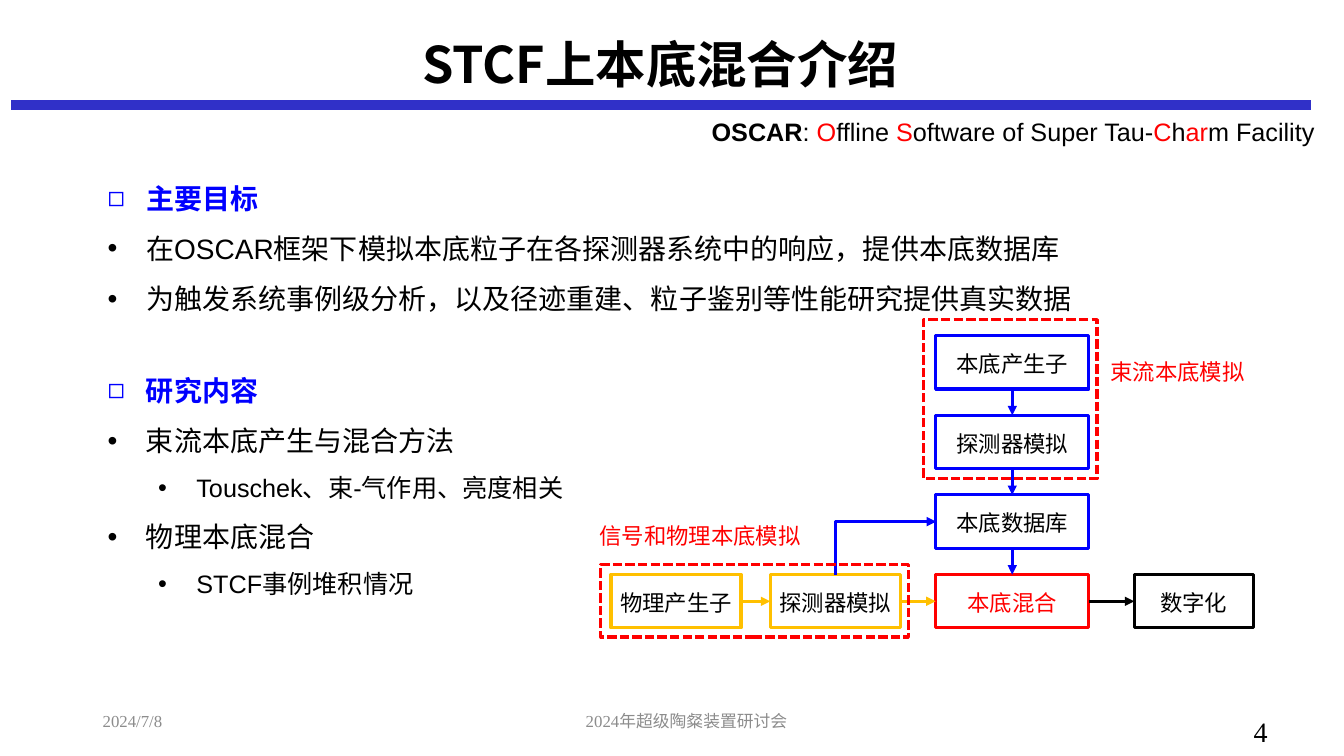
from pptx import Presentation
from pptx.dml.color import RGBColor
from pptx.enum.dml import MSO_LINE as Dash
from pptx.enum.shapes import MSO_CONNECTOR as Conn, MSO_SHAPE as Kind
from pptx.enum.text import MSO_ANCHOR as Anchor, PP_ALIGN as Align
from pptx.oxml.ns import qn
from pptx.util import Inches, Pt
from lxml.etree import SubElement

BLACK, BLUE, RED, GOLD, GREY, NAVY = "000000", "0000FF", "FF0000", "FFC000", "8C8C8C", "3030C8"
SANS, SERIF, HAN = "Arial", "Times New Roman", "Noto Sans CJK SC"
TOP, LEFT, BOTTOM, RIGHT = range(4)


def color(code):
    return RGBColor.from_string(code)


def apply(target, values):
    for name, value in values.items():
        setattr(target, name, value)


class Page:
    width = Pt(2.25)
    flush = dict.fromkeys(("margin_left", "margin_top", "margin_right", "margin_bottom"), 0)

    def __init__(self, deck):
        self.shapes = deck.slides.add_slide(deck.slide_layouts[6]).shapes

    def run(self, para, text, size, tint=BLACK, bold=False, face=SANS):
        run = para.add_run()
        run.text = text
        apply(run.font, {"size": Pt(size), "bold": bold, "name": face})
        run.font.color.rgb = color(tint)
        SubElement(run.font._element, qn("a:ea"), typeface=HAN)

    def frame(self, at, anchor=Anchor.MIDDLE, wrap=True, **extra):
        frame = self.shapes.add_textbox(*map(Inches, at)).text_frame
        apply(frame, {"word_wrap": wrap, "vertical_anchor": anchor, **extra})
        return frame

    def text(self, at, text, size, align=Align.LEFT, anchor=Anchor.MIDDLE, flush=False, **style):
        para = self.frame(at, anchor, **(self.flush if flush else {})).paragraphs[0]
        para.alignment = align
        self.run(para, text, size, **style)

    def bullets(self, at, items):
        frame = self.frame(at, Anchor.TOP)
        for i, (kind, text) in enumerate(items):
            para = frame.add_paragraph() if i else frame.paragraphs[0]
            head, sub = kind == "head", kind == "sub"
            apply(para, {"line_spacing": 1.5, "level": int(sub)})
            props = para._p.get_or_add_pPr()
            props.set("marL", str(Inches(0.88 if sub else 0.38)))
            props.set("indent", str(Inches(-0.38)))
            SubElement(props, qn("a:buFont"), typeface=SANS)
            SubElement(props, qn("a:buChar"), char="◻" if head else "•")
            self.run(para, text, 18 if sub else 20, BLUE if head else BLACK, head)

    def rect(self, at, edge):
        shape = self.shapes.add_shape(Kind.RECTANGLE, *map(Inches, at))
        shape.shadow.inherit = False
        shape.line.color.rgb = color(edge)
        shape.line.width = self.width
        return shape

    def box(self, at, text, edge, tint=BLACK):
        shape = self.rect(at, edge)
        shape.fill.solid()
        shape.fill.fore_color.rgb = color("FFFFFF")
        apply(shape.text_frame, {**self.flush, "vertical_anchor": Anchor.MIDDLE, "word_wrap": True})
        para = shape.text_frame.paragraphs[0]
        apply(para, {"alignment": Align.CENTER, "line_spacing": 1.1})
        self.run(para, text, 16, tint)
        return shape

    def group(self, at):
        shape = self.rect(at, RED)
        shape.fill.background()
        shape.line.dash_style = Dash.SQUARE_DOT

    def line(self, ends, tint, width=None, kind=Conn.STRAIGHT, arrow=True):
        line = self.shapes.add_connector(kind, *map(Inches, ends))
        line.line.color.rgb = color(tint)
        line.line.width = width or self.width
        if arrow:
            SubElement(line.line._get_or_add_ln(), qn("a:tailEnd"), type="triangle")
        SubElement(line._element.spPr, qn("a:effectLst"))
        return line

    def link(self, start, side, end, goal, tint):
        line = self.line((0, 0, 1, 1), tint)
        line.begin_connect(start, side)
        line.end_connect(end, goal)

    def bend(self, ends, tint):
        # One-corner elbow, turned a quarter
        props = self.line(ends, tint, kind=Conn.ELBOW)._element.spPr
        props.find(qn("a:prstGeom")).set("prst", "bentConnector2")
        props.find(qn("a:xfrm")).set("rot", "5400000")


def main():
    deck = Presentation()
    deck.slide_width, deck.slide_height = Inches(13.33), Inches(7.5)
    page = Page(deck)

    # Header and footer
    page.line((0.11, 1.04, 13, 1.04), NAVY, Pt(7), arrow=False)
    page.text((1.22, 0.17, 10.66, 0.92), "STCF上本底混合介绍", 36, Align.CENTER, bold=True, face=HAN)
    page.text((9.56, 7.04, 3.11, 0.37), "4", 20, Align.RIGHT, Anchor.TOP, face=SERIF)
    page.text((0.92, 6.95, 3, 0.4), "2024/7/8", 12, tint=GREY, face=SERIF)
    page.text((4.06, 6.95, 5.5, 0.4), "2024年超级陶粲装置研讨会", 12, Align.CENTER, tint=GREY, face=SERIF)

    # Full name with its initials in red
    para = page.frame((6.96, 1.1, 6.22, 0.4), Anchor.TOP, wrap=False).paragraphs[0]
    page.run(para, "OSCAR", 18, bold=True)
    parts = (": ", "O", "ffline ", "S", "oftware of Super Tau-", "C", "h", "ar", "m Facility")
    for i, part in enumerate(parts):
        page.run(para, part, 18, RED if i % 2 else BLACK)

    # Goals and topics
    page.bullets((0.97, 1.58, 11.05, 1.62), [
        ("head", "主要目标"),
        ("item", "在OSCAR框架下模拟本底粒子在各探测器系统中的响应，提供本底数据库"),
        ("item", "为触发系统事例级分析，以及径迹重建、粒子鉴别等性能研究提供真实数据")])
    page.bullets((0.97, 3.49, 6.27, 2.52), [
        ("head", "研究内容"),
        ("item", "束流本底产生与混合方法"),
        ("sub", "Touschek、束-气作用、亮度相关"),
        ("item", "物理本底混合"),
        ("sub", "STCF事例堆积情况")])

    # Flow chart: one column and one row that meet at the mixing step
    high, step, base = 0.53, 0.79, 5.7
    steps = [("本底产生子", BLUE, BLACK), ("探测器模拟", BLUE, BLACK),
             ("本底数据库", BLUE, BLACK), ("本底混合", RED, RED)]
    column = [page.box((9.28, base - step * (3 - i), 1.52, high), *item)
              for i, item in enumerate(steps)]
    mix = column[-1]
    source, detect, digit = [
        page.box((left, base, wide, high), text, edge) for left, wide, text, edge in (
            (6.06, 1.29, "物理产生子", GOLD), (7.64, 1.29, "探测器模拟", GOLD),
            (11.25, 1.18, "数字化", BLACK))]

    # Arrows
    for upper, lower in zip(column, column[1:]):
        page.link(upper, BOTTOM, lower, TOP, BLUE)
    for start, end, tint in ((source, detect, GOLD), (detect, mix, GOLD), (mix, digit, BLACK)):
        page.link(start, RIGHT, end, LEFT, tint)
    page.bend((9.05, 5.94, 8.52, 4.94), BLUE)

    # Dashed groups and their labels
    for at, label, text in (
            ((9.16, 3.17, 1.72, 1.58), (10.82, 3.52, 1.72, 0.33), "束流本底模拟"),
            ((5.96, 5.6, 3.05, 0.72), (5.82, 5.08, 2.25, 0.47), "信号和物理本底模拟")):
        page.group(at)
        page.text(label, text, 16, Align.CENTER, flush=True, tint=RED)

    deck.save("out.pptx")


if __name__ == "__main__":
    main()
